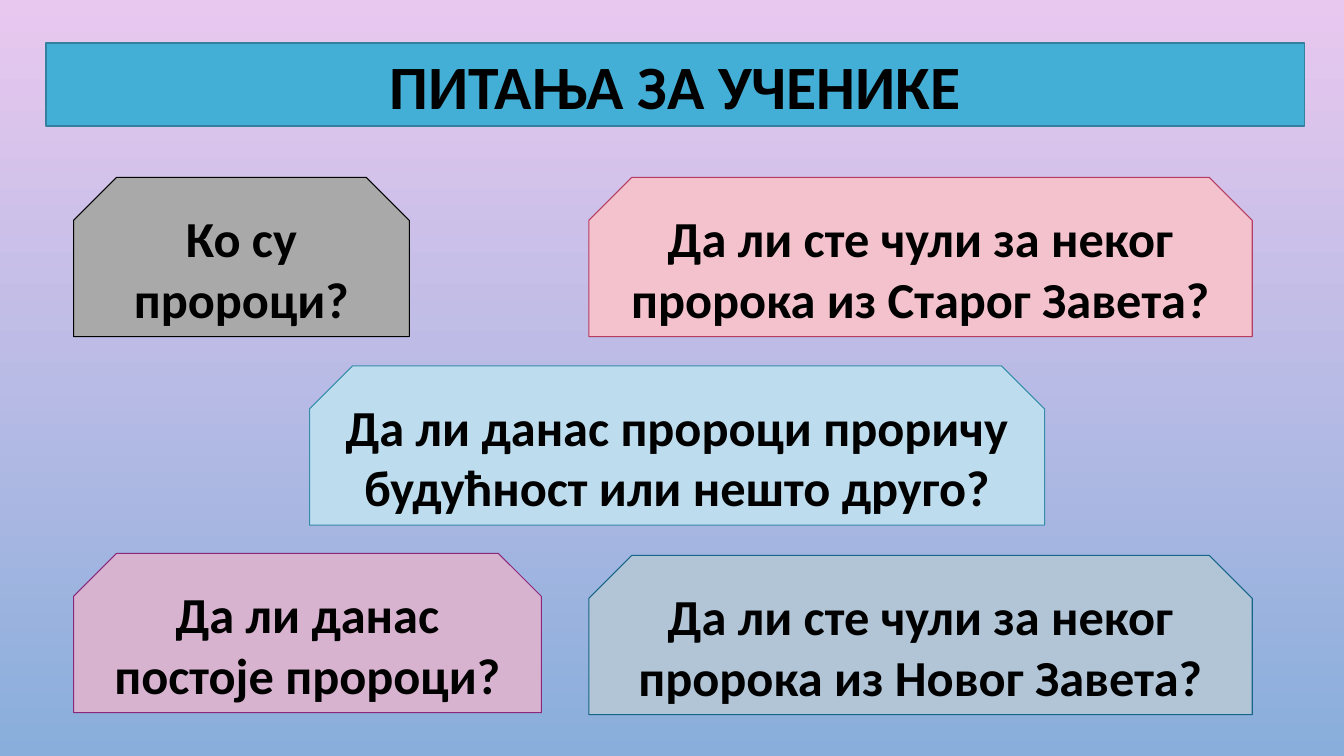
from lxml import etree
from pptx import Presentation
from pptx.dml.color import RGBColor
from pptx.enum.shapes import MSO_SHAPE
from pptx.enum.text import MSO_ANCHOR, MSO_AUTO_SIZE, PP_ALIGN
from pptx.oxml.ns import qn
from pptx.util import Inches, Pt

SNIPPED = MSO_SHAPE.SNIP_2_SAME_RECTANGLE
MIDDLE = MSO_ANCHOR.MIDDLE
NO_AUTOFIT = MSO_AUTO_SIZE.NONE
CENTER = PP_ALIGN.CENTER

COLORS = {
    "text": "000000",
    "sky_top": "E9C8EF", "sky_bottom": "89AEDB",
    "title": "43AFD6", "title_line": "32819E",
    "gray": "A9A9A9", "gray_line": "000000",
    "mauve": "D8B3D0", "mauve_line": "8A297B",
    "aqua": "BDDDEE", "aqua_line": "368CAB",
    "pink": "F4C2CD", "pink_line": "B63C62",
    "steel": "B1C5D7", "steel_line": "176589",
}


def rgb(name):
    return RGBColor.from_string(COLORS[name])


def write_panel(text, *, shape, color, size, line_width):
    shape.fill.solid()
    shape.fill.fore_color.rgb = rgb(color)
    shape.line.color.rgb = rgb(color + "_line")
    shape.line.width = Pt(line_width)
    frame = shape.text_frame
    frame.text = text
    frame.word_wrap = True
    frame.auto_size = NO_AUTOFIT
    frame.vertical_anchor = MIDDLE
    paragraph = frame.paragraphs[0]
    paragraph.alignment = CENTER
    font = paragraph.runs[0].font
    font.name = "Calibri"
    font.size = Pt(size)
    font.bold = True
    font.color.rgb = rgb("text")


presentation = Presentation()
presentation.slide_width = Inches(13.33)
presentation.slide_height = Inches(7.5)
slide = presentation.slides.add_slide(presentation.slide_layouts[5])

background = slide.background.fill
background.gradient()
background.gradient_angle = 270
for stop, color in zip(background.gradient_stops, ("sky_top", "sky_bottom")):
    stop.color.rgb = rgb(color)

title = slide.shapes.title
title.left, title.top = Inches(0.46), Inches(0.43)
title.width, title.height = Inches(12.48), Inches(0.82)
etree.SubElement(title._element.spPr, qn("a:prstGeom"), prst="plaque")
write_panel("ПИТАЊА ЗА УЧЕНИКЕ", shape=title, color="title", size=44, line_width=1.25)

PANEL_HEIGHT = 1.58
LEFT_COLUMN, RIGHT_COLUMN = 0.73, 5.84
RIGHT_WIDTH = 6.58
TOP_ROW = 1.76

questions = [
    ("Ко су пророци?", "gray", LEFT_COLUMN, TOP_ROW, 3.33),
    ("Да ли данас постоје пророци?", "mauve", LEFT_COLUMN, 5.49, 4.64),
    ("Да ли данас пророци проричу будућност или нешто друго?", "aqua", 3.07, 3.63, 7.29),
    ("Да ли сте чули за неког пророка из Старог Завета?", "pink", RIGHT_COLUMN, TOP_ROW, RIGHT_WIDTH),
    ("Да ли сте чули за неког пророка из Новог Завета?", "steel", RIGHT_COLUMN, 5.51, RIGHT_WIDTH),
]
for question, color, left, top, width in questions:
    panel = slide.shapes.add_shape(
        SNIPPED, Inches(left), Inches(top), Inches(width), Inches(PANEL_HEIGHT)
    )
    panel.shadow.inherit = False
    panel.adjustments[0] = 0.27
    panel.adjustments[1] = 0
    write_panel(question, shape=panel, color=color, size=36, line_width=0.75)

presentation.save("out.pptx")
